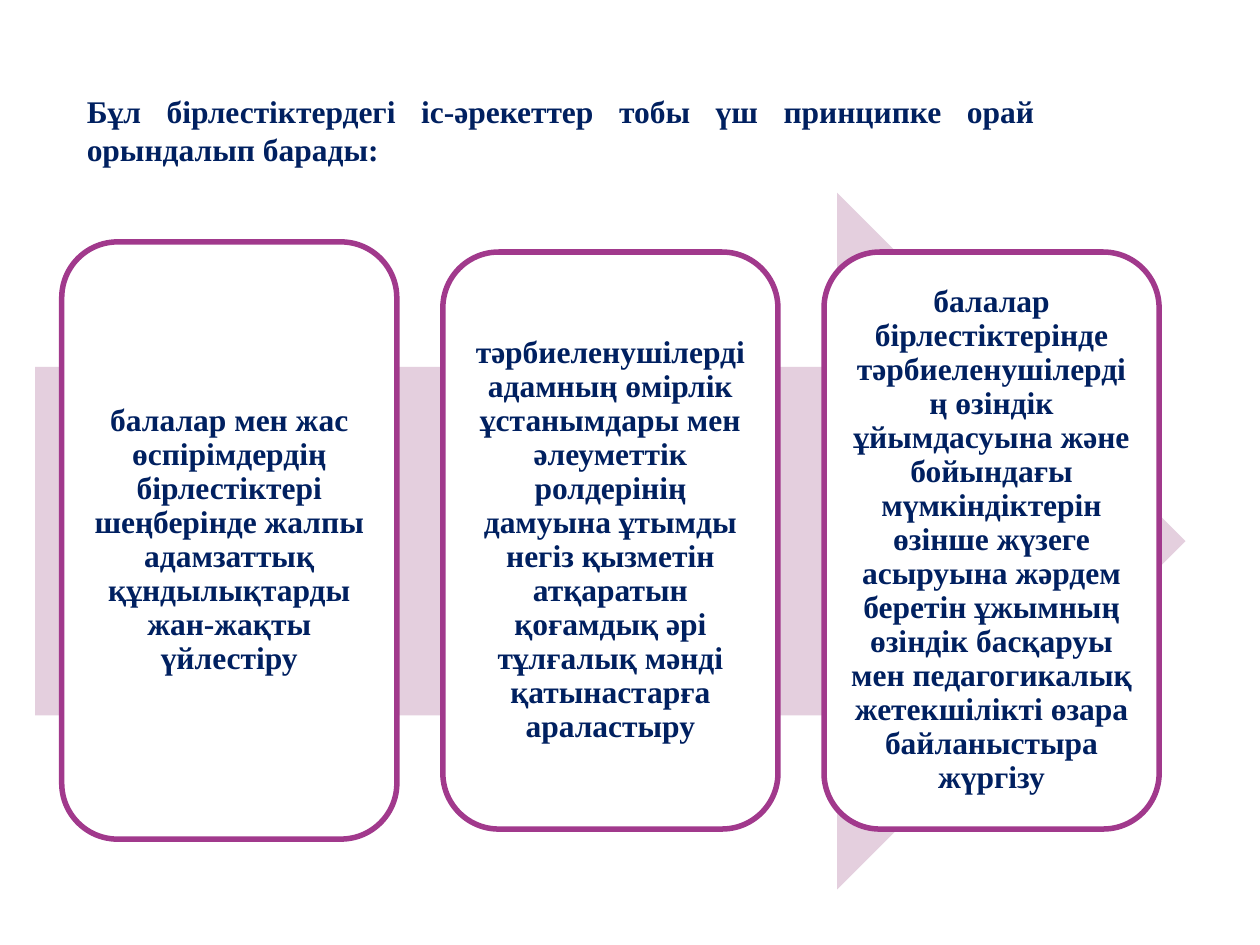
from pptx import Presentation
from pptx import util as u
from pptx.dml.color import RGBColor
from pptx.enum import shapes, text

COLORS = {"text": "002060", "arrow": "E4CFDE", "card": "FFFFFF", "border": "A1398C"}
FONT = "Times New Roman"
CARD_WIDTH, CARD_STEP, CARD_LEFT = 2.66, 3.025, 0.49
CARD_MIDDLE = 4.29

principles = [
    (4.74, "балалар мен жас өспірімдердің бірлестіктері шеңберінде жалпы "
           "адамзаттық құндылықтарды жан-жақты үйлестіру"),
    (4.58, "тəрбиеленушілерді адамның өмірлік ұстанымдары мен əлеуметтік "
           "ролдерінің дамуына ұтымды негіз қызметін атқаратын қоғамдық əрі "
           "тұлғалық мəнді қатынастарға араластыру"),
    (4.58, "балалар бірлестіктерінде тəрбиеленушілердің өзіндік ұйымдасуына "
           "жəне бойындағы мүмкіндіктерін өзінше жүзеге асыруына жəрдем "
           "беретін ұжымның өзіндік басқаруы мен педагогикалық жетекшілікті "
           "өзара байланыстыра жүргізу"),
]


def write(frame, wording, alignment):
    """Fill the frame's first paragraph with one bold run."""
    frame.word_wrap = True
    paragraph = frame.paragraphs[0]
    paragraph.alignment = alignment
    run = paragraph.add_run()
    run.text = wording
    run.font.name = FONT
    run.font.size = u.Pt(18)
    run.font.bold = True
    run.font.color.rgb = RGBColor.from_string(COLORS["text"])
    return paragraph


def add_filled_shape(slide, preset, left, top, width, height, color):
    shape = slide.shapes.add_shape(
        preset, u.Inches(left), u.Inches(top), u.Inches(width), u.Inches(height))
    shape.shadow.inherit = False
    shape.fill.solid()
    shape.fill.fore_color.rgb = RGBColor.from_string(color)
    return shape


presentation = Presentation()
presentation.slide_width = u.Inches(10)
presentation.slide_height = u.Inches(7.5)
slide = presentation.slides.add_slide(presentation.slide_layouts[6])

heading = slide.shapes.add_textbox(
    u.Inches(0.59), u.Inches(0.68), u.Inches(7.72), u.Inches(0.71))
heading.text_frame.auto_size = text.MSO_AUTO_SIZE.SHAPE_TO_FIT_TEXT
write(heading.text_frame,
      "Бұл бірлестіктердегі іс-əрекеттер тобы үш принципке орай орындалып барады:",
      text.PP_ALIGN.JUSTIFY)

arrow = add_filled_shape(slide, shapes.MSO_SHAPE.RIGHT_ARROW,
                         0.28, 1.53, 9.13, 5.53, COLORS["arrow"])
arrow.line.fill.background()

for index, (height, wording) in enumerate(principles):
    card = add_filled_shape(slide, shapes.MSO_SHAPE.ROUNDED_RECTANGLE,
                            CARD_LEFT + index * CARD_STEP, CARD_MIDDLE - height / 2,
                            CARD_WIDTH, height, COLORS["card"])
    card.line.color.rgb = RGBColor.from_string(COLORS["border"])
    card.line.width = u.Pt(3.15)
    frame = card.text_frame
    frame.vertical_anchor = text.MSO_ANCHOR.MIDDLE
    frame.margin_left = frame.margin_right = u.Inches(0.07)
    frame.margin_top = frame.margin_bottom = u.Inches(0.07)
    paragraph = write(frame, wording, text.PP_ALIGN.CENTER)
    paragraph.line_spacing = 0.9

presentation.save("out.pptx")
